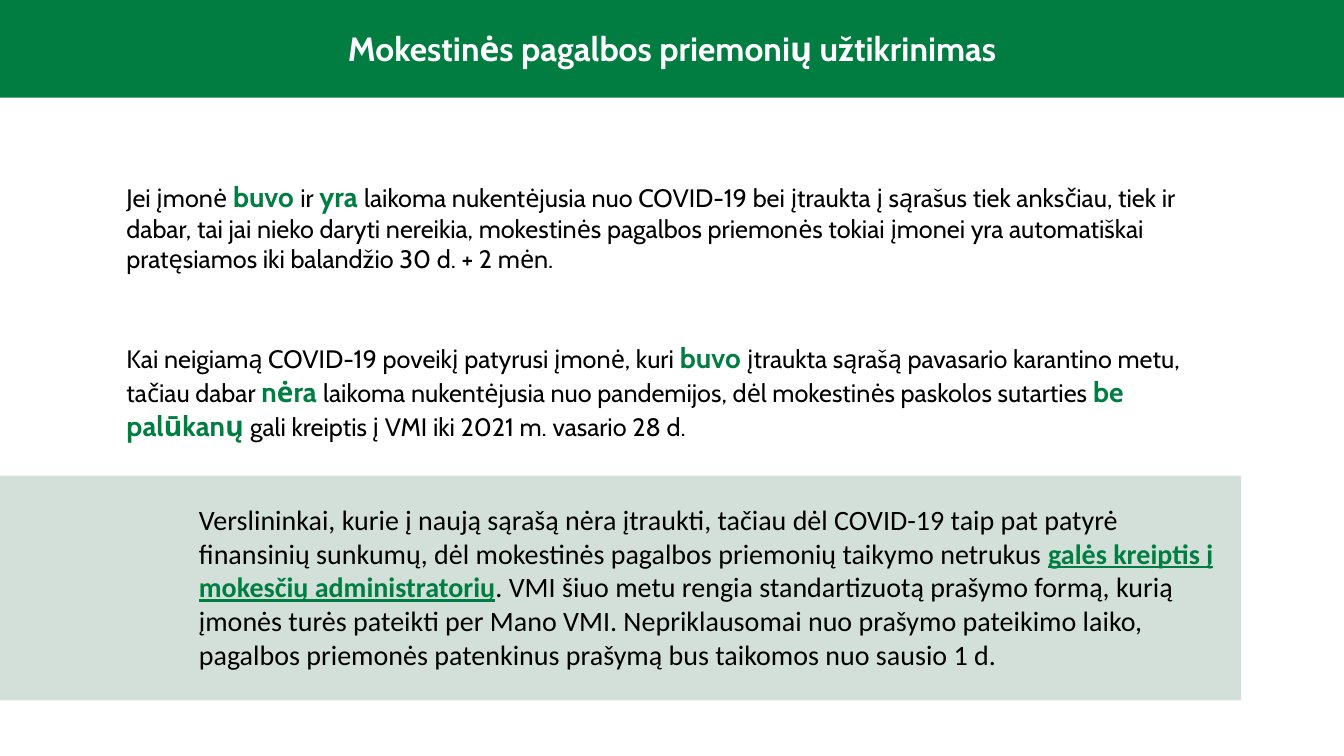
"""Build a slide on tax relief measures for firms hit by the pandemic."""
from dataclasses import dataclass, field

from pptx import Presentation
from pptx import util as u
from pptx.dml.color import RGBColor
from pptx.enum import shapes, text
from pptx.slide import Slide

PX = 9525


@dataclass(frozen=True)
class Theme:
    bar: str = "017D41"
    panel: str = "D3E0D9"
    green: str = "007D40"
    black: str = "000000"
    white: str = "FFFFFF"
    head: int = 24
    large: int = 20
    body: int = 18


@dataclass(frozen=True)
class Box:
    left: int
    top: int
    width: int
    height: int

    def emu(self) -> list[int]:
        return [n * PX for n in (self.left, self.top, self.width, self.height)]


@dataclass(frozen=True)
class Band:
    box: Box
    fill: str


@dataclass(frozen=True)
class Style:
    color: str
    format: dict


@dataclass(frozen=True)
class Block:
    box: Box
    words: str
    plain: Style
    strong: Style | None = field(default=None)
    align: text.PP_ALIGN = text.PP_ALIGN.LEFT


THEME = Theme()
TITLE = Style(THEME.white, {"name": "Cabin", "size": u.Pt(THEME.head), "bold": True})
BODY = Style(THEME.black, {"name": "Cabin", "size": u.Pt(THEME.body)})
KEY = Style(THEME.green, {"name": "Cabin", "size": u.Pt(THEME.large), "bold": True})
NOTE = Style(THEME.black, {"name": "Calibri", "size": u.Pt(THEME.large)})
LINK = Style(THEME.green, {**NOTE.format, "bold": True, "underline": True})

BANDS = [
    Band(Box(0, 453, 1182, 214), THEME.panel),
    Band(Box(0, 0, 1280, 93), THEME.bar),
]

BLOCKS = [
    Block(Box(0, 22, 1280, 48), "Mokestinės pagalbos priemonių užtikrinimas",
          TITLE, align=text.PP_ALIGN.CENTER),
    Block(Box(111, 166, 1028, 100),
          "Jei įmonė *buvo *ir *yra *laikoma nukentėjusia nuo COVID-19 bei įtraukta "
          "į sąrašus tiek anksčiau, tiek ir dabar, tai jai nieko daryti nereikia, "
          "mokestinės pagalbos priemonės tokiai įmonei yra automatiškai pratęsiamos "
          "iki balandžio 30 d. + 2 mėn.", BODY, KEY),
    Block(Box(111, 320, 1028, 107),
          "Kai neigiamą COVID-19 poveikį patyrusi įmonė, kuri *buvo *įtraukta sąrašą "
          "pavasario karantino metu, tačiau dabar *nėra *laikoma nukentėjusia nuo "
          "pandemijos, dėl mokestinės paskolos sutarties *be palūkanų *gali kreiptis "
          "į VMI iki 2021 m. vasario 28 d.", BODY, KEY),
    Block(Box(180, 474, 988, 171),
          "Verslininkai, kurie į naują sąrašą nėra įtraukti, tačiau dėl COVID-19 taip "
          "pat patyrė finansinių sunkumų, dėl mokestinės pagalbos priemonių taikymo "
          "netrukus *galės kreiptis į mokesčių administratorių*. VMI šiuo metu rengia "
          "standartizuotą prašymo formą, kurią įmonės turės pateikti per Mano VMI. "
          "Nepriklausomai nuo prašymo pateikimo laiko, pagalbos priemonės patenkinus "
          "prašymą bus taikomos nuo sausio 1 d.", NOTE, LINK),
]


def draw_band(slide: Slide, band: Band) -> None:
    shape = slide.shapes.add_shape(shapes.MSO_SHAPE.RECTANGLE, *band.box.emu())
    shape.shadow.inherit = False
    shape.fill.solid()
    shape.fill.fore_color.rgb = RGBColor.from_string(band.fill)
    shape.line.fill.background()


def draw_block(slide: Slide, block: Block) -> None:
    frame = slide.shapes.add_textbox(*block.box.emu()).text_frame
    frame.word_wrap = True
    frame.auto_size = text.MSO_AUTO_SIZE.SHAPE_TO_FIT_TEXT
    para = frame.paragraphs[0]
    para.alignment = block.align
    for i, part in enumerate(block.words.split("*")):
        style = block.strong if i % 2 and block.strong else block.plain
        run = para.add_run()
        run.text = part
        for name, value in style.format.items():
            setattr(run.font, name, value)
        run.font.color.rgb = RGBColor.from_string(style.color)


def main() -> None:
    deck = Presentation()
    deck.slide_width, deck.slide_height = 1280 * PX, 720 * PX
    slide = deck.slides.add_slide(deck.slide_layouts[6])
    for band in BANDS:
        draw_band(slide, band)
    for block in BLOCKS:
        draw_block(slide, block)
    deck.save("out.pptx")


if __name__ == "__main__":
    main()
